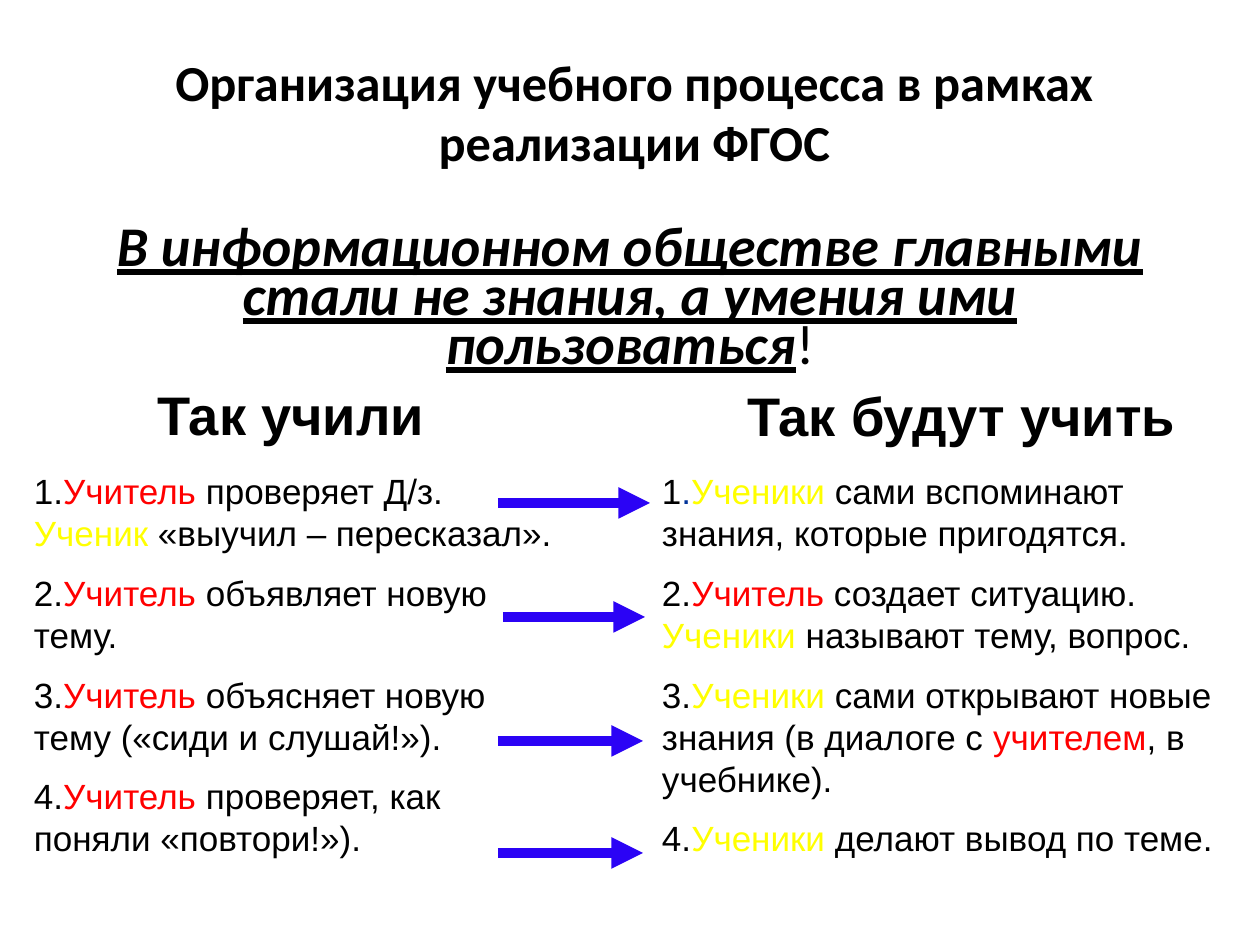
"""Build a slide that compares the former and the new way of teaching."""
from dataclasses import dataclass

from lxml import etree
from pptx import Presentation
from pptx.dml.color import RGBColor
from pptx.enum.shapes import MSO_CONNECTOR
from pptx.enum.text import MSO_ANCHOR, PP_ALIGN
from pptx.oxml.ns import qn
from pptx.util import Emu, Pt

PX_PER_INCH = 126
EMU_PER_INCH = 914400
BLACK = RGBColor(0x00, 0x00, 0x00)
RED = RGBColor(0xFF, 0x00, 0x00)
YELLOW = RGBColor(0xFF, 0xFF, 0x00)
NAVY = RGBColor(0x00, 0x33, 0x99)
BLUE = RGBColor(0x2B, 0x03, 0xF5)
LEFT, CENTER = PP_ALIGN.LEFT, PP_ALIGN.CENTER
TOP, MIDDLE = MSO_ANCHOR.TOP, MSO_ANCHOR.MIDDLE
STRAIGHT = MSO_CONNECTOR.STRAIGHT


@dataclass(frozen=True)
class Span:
    text: str
    color: RGBColor = BLACK
    emphasis: bool = False


@dataclass(frozen=True)
class Style:
    font: str
    size: float
    bold: bool = False
    align: PP_ALIGN = LEFT
    anchor: MSO_ANCHOR = TOP
    line_spacing: float = 1.0
    space_before: float = 0
    inset_x: int = 14
    inset_y: int = 8


@dataclass(frozen=True)
class Block:
    left: int
    top: int
    width: int
    height: int
    style: Style
    paras: tuple[tuple[Span, ...], ...]


@dataclass(frozen=True)
class Arrow:
    start: int
    end: int
    y: int


TITLE = Style("Calibri", 28.8, bold=True, align=CENTER, anchor=MIDDLE, inset_x=13, inset_y=6)
MOTTO = Style("Calibri", 32, align=CENTER, line_spacing=0.73, space_before=6.4,
              inset_x=13, inset_y=6)
HEADING = Style("Arial", 31, bold=True, align=CENTER, space_before=15.5)
STEPS = Style("Arial", 20, space_before=10)

FORMER_STEPS = (
    (Span("1."), Span("Учитель", RED), Span(" проверяет Д/з. "),
     Span("Ученик", YELLOW), Span(" «выучил – пересказал».")),
    (Span("2."), Span("Учитель", RED), Span(" объявляет новую тему.")),
    (Span("3."), Span("Учитель ", RED), Span("объясняет новую тему («сиди и слушай!»).")),
    (Span("4."), Span("Учитель", RED), Span(" проверяет, как поняли «повтори!»).")),
)
NEW_STEPS = (
    (Span("1"), Span(".", NAVY), Span("Ученики", YELLOW),
     Span(" сами вспоминают знания, которые пригодятся.")),
    (Span("2."), Span("Учитель", RED), Span(" создает ситуацию. "),
     Span("Ученики ", YELLOW), Span("называют тему, вопрос.")),
    (Span("3."), Span("Ученики", YELLOW), Span(" сами открывают новые знания (в диалоге с "),
     Span("учителем", RED), Span(", в учебнике).")),
    (Span("4."), Span("Ученики", YELLOW), Span(" делают вывод по теме.")),
)
BLOCKS = (
    Block(63, 38, 1143, 147, TITLE,
          ((Span("Организация учебного процесса в рамках реализации ФГОС"),),)),
    Block(63, 221, 1134, 624, MOTTO,
          ((Span("В информационном обществе главными стали не знания, а умения ими пользоваться",
                 emphasis=True), Span("!")),)),
    Block(4, 373, 588, 79, HEADING, ((Span("Так учили "),),)),
    Block(672, 374, 578, 79, HEADING, ((Span("Так будут учить"),),)),
    Block(20, 462, 556, 413, STEPS, FORMER_STEPS),
    Block(648, 462, 610, 413, STEPS, NEW_STEPS),
)
ARROWS = (Arrow(498, 650, 503), Arrow(503, 645, 617), Arrow(498, 643, 741), Arrow(498, 643, 853))


def px(length: int) -> Emu:
    return Emu(round(length * EMU_PER_INCH / PX_PER_INCH))


def apply(target: object, values: dict[str, object]) -> None:
    for name, value in values.items():
        setattr(target, name, value)


def draw_block(page: object, block: Block) -> None:
    style = block.style
    box = page.shapes.add_textbox(px(block.left), px(block.top), px(block.width), px(block.height))
    frame = box.text_frame
    apply(frame, {
        "word_wrap": True, "vertical_anchor": style.anchor,
        "margin_left": px(style.inset_x), "margin_right": px(style.inset_x),
        "margin_top": px(style.inset_y), "margin_bottom": px(style.inset_y),
    })
    for index, spans in enumerate(block.paras):
        para = frame.add_paragraph() if index else frame.paragraphs[0]
        apply(para, {"alignment": style.align, "line_spacing": style.line_spacing,
                     "space_before": Pt(style.space_before)})
        for span in spans:
            run = para.add_run()
            run.text = span.text
            apply(run.font, {"name": style.font, "size": Pt(style.size),
                             "bold": style.bold or span.emphasis,
                             "italic": span.emphasis, "underline": span.emphasis})
            run.font.color.rgb = span.color


def draw_arrow(page: object, arrow: Arrow) -> None:
    connector = page.shapes.add_connector(
        STRAIGHT, px(arrow.start), px(arrow.y), px(arrow.end), px(arrow.y))
    connector.line.width = Pt(6)
    connector.line.color.rgb = BLUE
    properties = connector.line._get_or_add_ln()
    etree.SubElement(properties, qn("a:tailEnd"), type="triangle")
    etree.SubElement(connector._element.spPr, qn("a:effectLst"))


def main() -> None:
    deck = Presentation()
    apply(deck, {"slide_width": px(1260), "slide_height": px(945)})
    page = deck.slides.add_slide(deck.slide_layouts[6])
    for block in BLOCKS:
        draw_block(page, block)
    for arrow in ARROWS:
        draw_arrow(page, arrow)
    deck.save("out.pptx")


if __name__ == "__main__":
    main()
